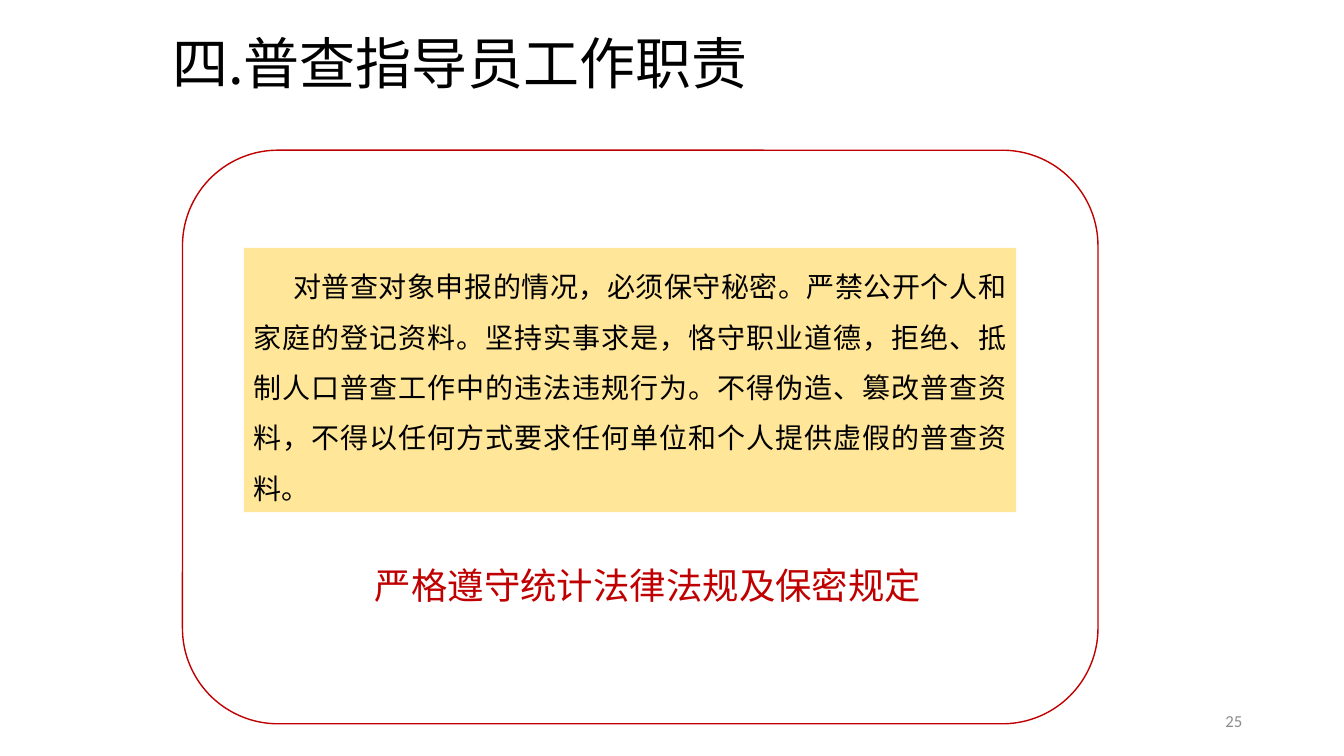
from lxml.etree import SubElement
from pptx import Presentation
from pptx.dml.color import RGBColor
from pptx.enum.shapes import MSO_SHAPE
from pptx.enum.text import MSO_ANCHOR, MSO_AUTO_SIZE, PP_ALIGN
from pptx.oxml.ns import qn
from pptx.util import Inches, Pt

CJK = "Noto Sans CJK SC"
LATIN = "Calibri"
RED, BLACK, GREY, SAND = "C00000", "000000", "8C8C8C", "FFE699"

TITLE = "四.普查指导员工作职责"
DUTY = (
    "对普查对象申报的情况，必须保守秘密。严禁公开个人和家庭的登记资料。"
    "坚持实事求是，恪守职业道德，拒绝、抵制人口普查工作中的违法违规行为。"
    "不得伪造、篡改普查资料，不得以任何方式要求任何单位和个人提供虚假的普查资料。"
)
RULE = "严格遵守统计法律法规及保密规定"


def color(hex_string):
    return RGBColor.from_string(hex_string)


def inches(box):
    return [Inches(length) for length in box]


def write(frame, text, size, font, ink, align=PP_ALIGN.LEFT, spacing=1.0,
          anchor=MSO_ANCHOR.TOP, wrap=True):
    frame.word_wrap = wrap
    frame.auto_size = MSO_AUTO_SIZE.NONE
    frame.vertical_anchor = anchor
    paragraph = frame.paragraphs[0]
    paragraph.alignment = align
    paragraph.line_spacing = spacing
    run = paragraph.add_run()
    run.text = text
    run.font.size = Pt(size)
    run.font.color.rgb = color(ink)
    run.font.name = font
    SubElement(run.font._element, qn("a:ea"), typeface=CJK)
    return paragraph


def add_title(slide, box):
    title = slide.shapes.title
    title.left, title.top, title.width, title.height = inches(box)
    write(title.text_frame, TITLE, 40, CJK, BLACK, spacing=0.9,
          anchor=MSO_ANCHOR.BOTTOM)


def add_duty_panel(slide, box):
    """Draw the rounded outline with the duty text and the rule inside it."""
    left, top, width, height = box
    outline = slide.shapes.add_shape(MSO_SHAPE.ROUNDED_RECTANGLE, *inches(box))
    outline.shadow.inherit = False
    outline.fill.background()
    outline.line.color.rgb = color(RED)
    outline.line.width = Pt(1)

    rule = slide.shapes.add_textbox(
        *inches((left + 1.81, top + 4.05, 5.67, 0.54)))
    write(rule.text_frame, RULE, 26, LATIN, RED, wrap=False)

    duty = slide.shapes.add_shape(
        MSO_SHAPE.RECTANGLE,
        *inches((left + 0.61, top + 0.97, width - 1.42, height - 3.07)))
    duty.shadow.inherit = False
    duty.fill.solid()
    duty.fill.fore_color.rgb = color(SAND)
    duty.line.fill.background()
    paragraph = write(duty.text_frame, DUTY, 20, CJK, BLACK,
                      align=PP_ALIGN.JUSTIFY, spacing=1.5)
    properties = paragraph._p.get_or_add_pPr()
    properties.set("marL", "0")
    properties.set("indent", str(Inches(0.39)))


def add_page_number(slide, box):
    number = slide.shapes.add_textbox(*inches(box))
    write(number.text_frame, "25", 12, LATIN, GREY, align=PP_ALIGN.RIGHT,
          anchor=MSO_ANCHOR.MIDDLE)


def main():
    deck = Presentation()
    deck.slide_width, deck.slide_height = Inches(13.33), Inches(7.5)
    slide = deck.slides.add_slide(deck.slide_layouts[5])
    add_page_number(slide, (9.42, 6.95, 3, 0.4))
    add_title(slide, (1.61, 0, 11.5, 1.01))
    add_duty_panel(slide, (1.81, 1.49, 9.08, 5.69))
    deck.save("out.pptx")


if __name__ == "__main__":
    main()
